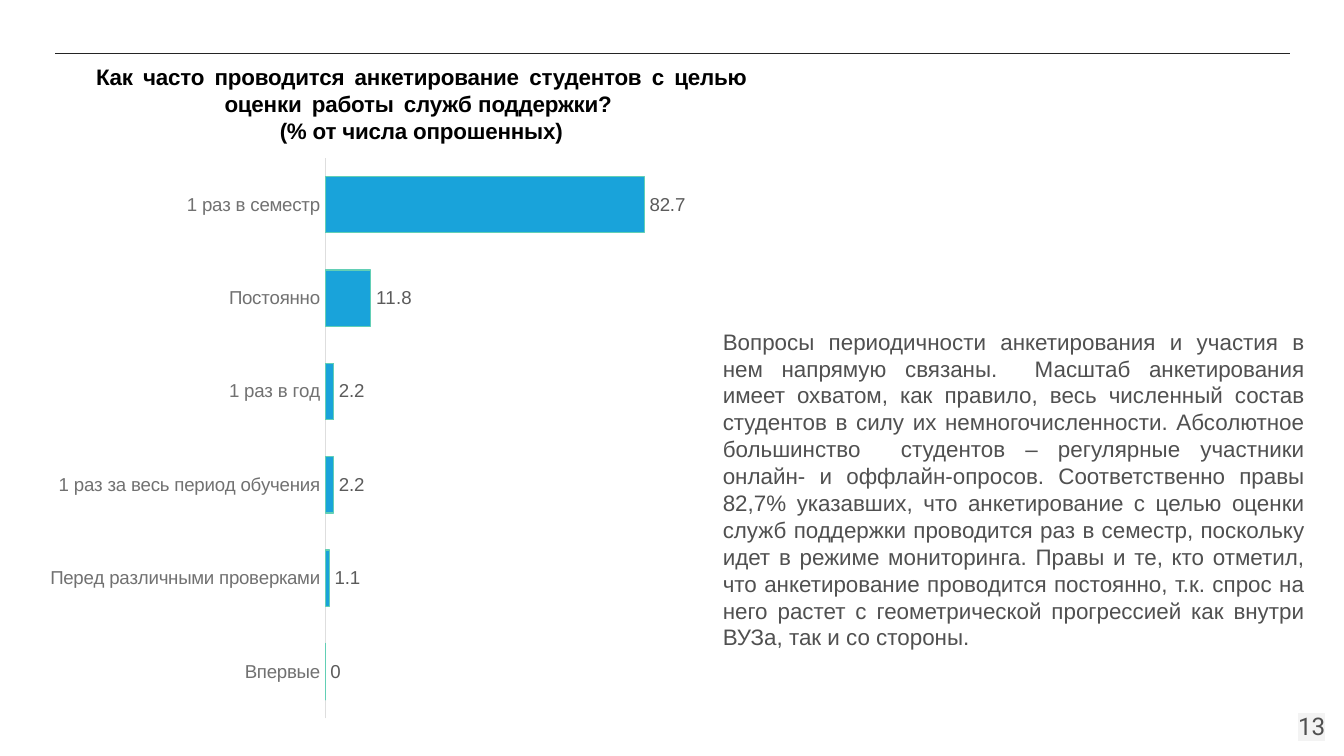
from lxml import etree
from pptx import Presentation
from pptx.chart.data import CategoryChartData
from pptx.dml.color import RGBColor
from pptx.enum.chart import XL_CHART_TYPE, XL_LABEL_POSITION, XL_TICK_MARK
from pptx.enum.shapes import MSO_CONNECTOR
from pptx.enum.text import PP_ALIGN
from pptx.oxml import parse_xml
from pptx.oxml.ns import nsdecls, qn
from pptx.util import Inches, Pt

BAR = XL_CHART_TYPE.BAR_CLUSTERED
OUTSIDE = XL_LABEL_POSITION.OUTSIDE_END
NO_TICK = XL_TICK_MARK.NONE
STRAIGHT = MSO_CONNECTOR.STRAIGHT
CENTER, RIGHT, JUSTIFY = PP_ALIGN.CENTER, PP_ALIGN.RIGHT, PP_ALIGN.JUSTIFY

QUERY = "Как часто проводится анкетирование студентов с целью оценки работы служб поддержки?"
BODY = (
    "Вопросы периодичности анкетирования и участия в нем напрямую связаны.  "
    "Масштаб анкетирования имеет охватом, как правило, весь численный состав "
    "студентов в силу их немногочисленности. Абсолютное большинство  студентов – "
    "регулярные участники онлайн- и оффлайн-опросов. Соответственно правы 82,7% "
    "указавших, что анкетирование с целью оценки служб поддержки проводится раз "
    "в семестр, поскольку идет в режиме мониторинга. Правы и те, кто отметил, что "
    "анкетирование проводится постоянно, т.к. спрос на него растет с "
    "геометрической прогрессией как внутри ВУЗа, так и со стороны."
)
RATES = {
    "Впервые": 0,
    "Перед различными проверками": 1.1,
    "1 раз за весь период обучения": 2.2,
    "1 раз в год": 2.2,
    "Постоянно": 11.8,
    "1 раз в семестр": 82.7,
}
PLOT = {"x": 0.437, "y": 0.001, "w": 0.509, "h": 0.977}


def color(code):
    """Return the colour for a hex string."""
    return RGBColor.from_string(code)


def style(item, form):
    """Set every attribute named in a dict."""
    for name, value in form.items():
        setattr(item, name, value)


def paint(font, size, code, name="Arial", bold=False):
    """Set the look of a font."""
    style(font, {"size": Pt(size), "name": name, "bold": bold})
    font.color.rgb = color(code)


def stroke(line, code):
    """Give a line its colour and hairline width."""
    line.color.rgb = color(code)
    line.width = Pt(0.75)


def add_box(slide, left, top, width, height, inset, head):
    """Add a wrapping text frame with side and top insets."""
    box = slide.shapes.add_textbox(*map(Inches, (left, top, width, height)))
    frame = box.text_frame
    style(frame, {
        "word_wrap": True, "margin_left": Inches(inset), "margin_right": Inches(0.1),
        "margin_top": Inches(head), "margin_bottom": Inches(0.05),
    })
    return frame


def add_run(para, text, size, code, **form):
    """Add one styled run to a paragraph."""
    run = para.add_run()
    run.text = text
    paint(run.font, size, code, **form)
    return run


def add_rule(slide):
    """Draw the line along the top of the slide."""
    rule = slide.shapes.add_connector(
        STRAIGHT, Inches(0.41), Inches(0.4), Inches(9.6), Inches(0.4))
    stroke(rule.line, "242424")
    etree.SubElement(rule._element.spPr, qn("a:effectLst"))


def add_page(slide):
    """Add the highlighted page number."""
    para = add_box(slide, 9.36, 5.19, 0.6, 0.43, 0.1, 0.1).paragraphs[0]
    para.alignment = RIGHT
    run = add_run(para, "13", 13, "505050", name="Roboto")
    mark = parse_xml(f'<a:highlight {nsdecls("a")}><a:srgbClr val="F3F3F3"/></a:highlight>')
    run._r.rPr.find(qn("a:solidFill")).addnext(mark)


def add_body(slide):
    """Add the justified comment."""
    para = add_box(slide, 5.28, 2.18, 4.53, 3.26, 0.1, 0.26).paragraphs[0]
    para.alignment = JUSTIFY
    add_run(para, BODY, 12, "505050")


def add_title(slide):
    """Add the question with widened word gaps."""
    frame = add_box(slide, 0.2, 0.42, 5.77, 0.71, 0.2, 0.05)
    para = frame.paragraphs[0]
    para.alignment = CENTER
    for word in QUERY.split():
        space = "0" if word in ("служб", "поддержки?") else "200"
        for text, gap in ((word, "-10"), (" ", space)):
            run = add_run(para, text, 12, "000000", bold=True)
            run._r.rPr.set("spc", gap)
    para = frame.add_paragraph()
    para.alignment = CENTER
    run = add_run(para, "(% от числа опрошенных)", 12, "000000", bold=True)
    run._r.rPr.set("spc", "-10")


def set_plot(chart):
    """Fix the inner plot area by shares of the chart."""
    modes = "".join(f'<c:{k}Mode val="edge"/>' for k in "xy")
    sizes = "".join(f'<c:{k} val="{v}"/>' for k, v in PLOT.items())
    area = chart._chartSpace.chart.plotArea
    for old in area.findall(qn("c:layout")):
        area.remove(old)
    area.insert(0, parse_xml(
        f'<c:layout {nsdecls("c")}><c:manualLayout><c:layoutTarget val="inner"/>'
        f'{modes}{sizes}</c:manualLayout></c:layout>'))


def add_bars(slide):
    """Add the bar chart of survey rates."""
    data = CategoryChartData()
    data.categories = list(RATES)
    data.add_series("Series 1", list(RATES.values()))
    spot = map(Inches, (0.2, 1.17, 5.08, 4.27))
    chart = slide.shapes.add_chart(BAR, *spot, data).chart
    style(chart, {"has_legend": False, "has_title": False})
    paint(chart.font, 10, "242424")
    axis = chart.category_axis
    style(axis, {"major_tick_mark": NO_TICK, "has_major_gridlines": False})
    paint(axis.tick_labels.font, 10, "717171")
    stroke(axis.format.line, "DEDEDE")
    style(chart.value_axis, {
        "visible": False, "has_major_gridlines": False,
        "minimum_scale": 0, "maximum_scale": 90,
    })
    plot = chart.plots[0]
    style(plot, {"gap_width": 66, "vary_by_categories": False, "has_data_labels": True})
    style(plot.data_labels, {"show_value": True, "position": OUTSIDE})
    paint(plot.data_labels.font, 10, "5B5B5B")
    bars = plot.series[0]
    bars.invert_if_negative = False
    bars.format.fill.solid()
    bars.format.fill.fore_color.rgb = color("19A3DA")
    stroke(bars.format.line, "62CFB5")
    set_plot(chart)


def main():
    """Build and save the slide."""
    deck = Presentation()
    wide = Inches(10)
    style(deck, {"slide_width": wide, "slide_height": wide * 9 // 16})
    slide = deck.slides.add_slide(deck.slide_layouts[6])
    add_rule(slide)
    add_page(slide)
    add_body(slide)
    add_bars(slide)
    add_title(slide)
    deck.save("out.pptx")


if __name__ == "__main__":
    main()
